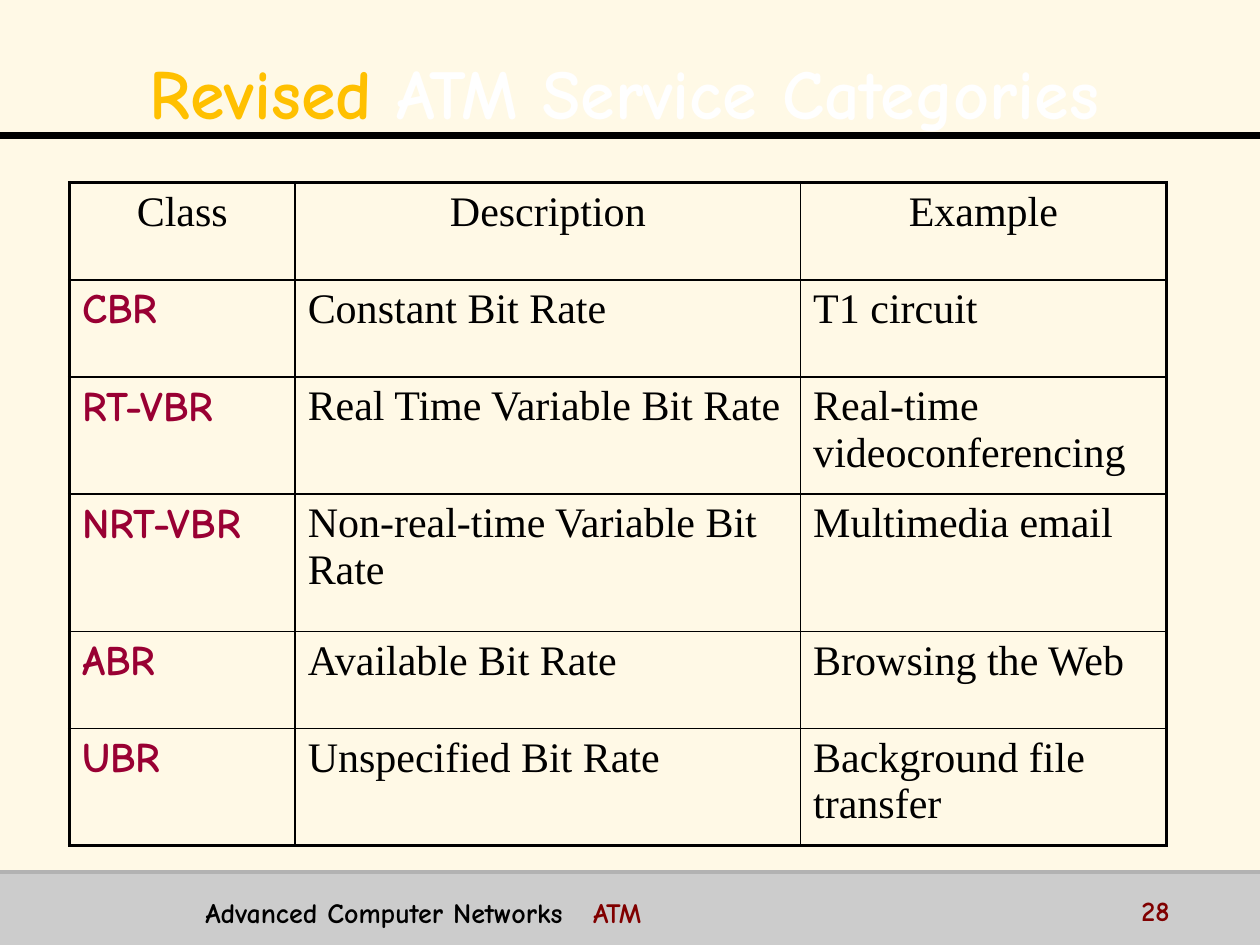
from dataclasses import dataclass

from lxml.etree import SubElement
from pptx import Presentation
from pptx.dml.color import RGBColor as Color
from pptx.enum.shapes import MSO_CONNECTOR as Connector, MSO_SHAPE as Shape
from pptx.enum.text import MSO_ANCHOR as Anchor, PP_ALIGN as Align
from pptx.oxml.ns import qn
from pptx.util import Cm, Pt


@dataclass(frozen=True)
class Theme:
    background: str = "FFF9E6"
    footer: str = "CCCCCC"
    footer_line: str = "B2B2B2"
    ink: str = "000000"
    white: str = "FFFFFF"
    gold: str = "FFC000"
    wine: str = "990033"
    maroon: str = "800000"
    display: str = "Comic Neue"
    body: str = "Times New Roman"
    title_size: int = 40
    table_size: int = 24
    footer_size: int = 16
    outer_border: float = 2.25
    inner_border: float = 1


theme = Theme()

# Content
TITLE = [("Revised", theme.gold), (" ATM Service Categories", theme.white)]
FOOTER = [("Advanced Computer Networks\t", theme.ink), ("ATM", theme.maroon)]
PAGE_NUMBER = [("28", theme.maroon)]
ROWS = [
    ("Class", "Description", "Example"),
    ("CBR", "Constant Bit Rate", "T1 circuit"),
    ("RT-VBR", "Real Time Variable Bit Rate", "Real-time videoconferencing"),
    ("NRT-VBR", "Non-real-time Variable Bit Rate", "Multimedia email"),
    ("ABR", "Available Bit Rate", "Browsing the Web"),
    ("UBR", "Unspecified Bit Rate", "Background file transfer"),
]

# Layout in centimetres
WIDTH, HEIGHT = 25.4, 19.05
TITLE_LINE, FOOTER_TOP = 2.74, 17.58
TABLE_LEFT, TABLE_TOP = 1.4, 3.68
COLUMN_WIDTHS = (4.55, 10.19, 7.37)
ROW_HEIGHTS = (1.96, 1.96, 2.36, 2.77, 1.96, 2.36)
FOOTER_TAB = 7.82


def style(font, name, size, color, bold):
    font.name, font.size, font.bold = name, Pt(size), bold
    font.color.rgb = Color.from_string(color)


def add_text(page, area, spans, size, anchor=Anchor.TOP):
    box = page.shapes.add_textbox(*map(Cm, area))
    frame = box.text_frame
    frame.word_wrap = True
    frame.vertical_anchor = anchor
    para = frame.paragraphs[0]
    for text, color in spans:
        span = para.add_run()
        span.text = text
        style(span.font, theme.display, size, color, True)
    return para


def add_rule(page, y, color, width):
    rule = page.shapes.add_connector(Connector.STRAIGHT, 0, Cm(y), Cm(WIDTH), Cm(y))
    rule.line.color.rgb = Color.from_string(color)
    rule.line.width = Pt(width)
    SubElement(rule._element.spPr, qn("a:effectLst"))


def add_text_shadow(span):
    properties = span.font._element
    effects = properties.makeelement(qn("a:effectLst"), {})
    shadow = SubElement(effects, qn("a:outerShdw"), dist="38100", dir="2700000")
    SubElement(shadow, qn("a:srgbClr"), val=theme.ink)
    properties.find(qn("a:solidFill")).addnext(effects)


def set_borders(cell, outer_sides):
    properties = cell._tc.get_or_add_tcPr()
    for side, is_outer in outer_sides.items():
        width = theme.outer_border if is_outer else theme.inner_border
        line = SubElement(properties, qn(f"a:ln{side}"), w=str(Pt(width)))
        fill = SubElement(line, qn("a:solidFill"))
        SubElement(fill, qn("a:srgbClr"), val=theme.ink)


def add_table(page):
    last_row, last_column = len(ROWS) - 1, len(COLUMN_WIDTHS) - 1
    area = (TABLE_LEFT, TABLE_TOP, sum(COLUMN_WIDTHS), sum(ROW_HEIGHTS))
    table = page.shapes.add_table(
        len(ROWS), len(COLUMN_WIDTHS), *map(Cm, area)
    ).table
    table.first_row = table.horz_banding = False
    for column, width in zip(table.columns, COLUMN_WIDTHS):
        column.width = Cm(width)
    for r, (texts, height) in enumerate(zip(ROWS, ROW_HEIGHTS)):
        table.rows[r].height = Cm(height)
        for c, text in enumerate(texts):
            cell = table.cell(r, c)
            set_borders(cell, {"L": c == 0, "R": c == last_column,
                               "T": r == 0, "B": r == last_row})
            cell.fill.background()
            para = cell.text_frame.paragraphs[0]
            para.text = text
            para.alignment = Align.CENTER if r == 0 else Align.LEFT
            is_class = r > 0 and c == 0
            style(para.runs[0].font, theme.display if is_class else theme.body,
                  theme.table_size, theme.wine if is_class else theme.ink, is_class)


def main():
    deck = Presentation()
    deck.slide_width, deck.slide_height = Cm(WIDTH), Cm(HEIGHT)
    page = deck.slides.add_slide(deck.slide_layouts[6])
    page.background.fill.solid()
    page.background.fill.fore_color.rgb = Color.from_string(theme.background)

    # Footer band and rules
    band = page.shapes.add_shape(Shape.RECTANGLE, 0, Cm(FOOTER_TOP), Cm(WIDTH),
                                 Cm(HEIGHT - FOOTER_TOP))
    band.shadow.inherit = False
    band.fill.solid()
    band.fill.fore_color.rgb = Color.from_string(theme.footer)
    band.line.fill.background()
    add_rule(page, TITLE_LINE, theme.ink, 4)
    add_rule(page, FOOTER_TOP, theme.footer_line, 2)

    # Title
    title = add_text(page, (1.09, 0.33, 22.99, 2.87), TITLE, theme.title_size,
                     Anchor.MIDDLE)
    title.alignment = Align.CENTER
    title.line_spacing = 1.1
    for span in title.runs:
        add_text_shadow(span)

    # Service categories
    add_table(page)

    # Footer text and page number
    footer = add_text(page, (3.89, 17.93, 18.49, 0.79), FOOTER, theme.footer_size)
    tabs = SubElement(footer._p.get_or_add_pPr(), qn("a:tabLst"))
    SubElement(tabs, qn("a:tab"), pos=str(Cm(FOOTER_TAB)), algn="l")
    add_text(page, (22.76, 17.88, 2.54, 1.17), PAGE_NUMBER, theme.footer_size)

    deck.save("out.pptx")


if __name__ == "__main__":
    main()
